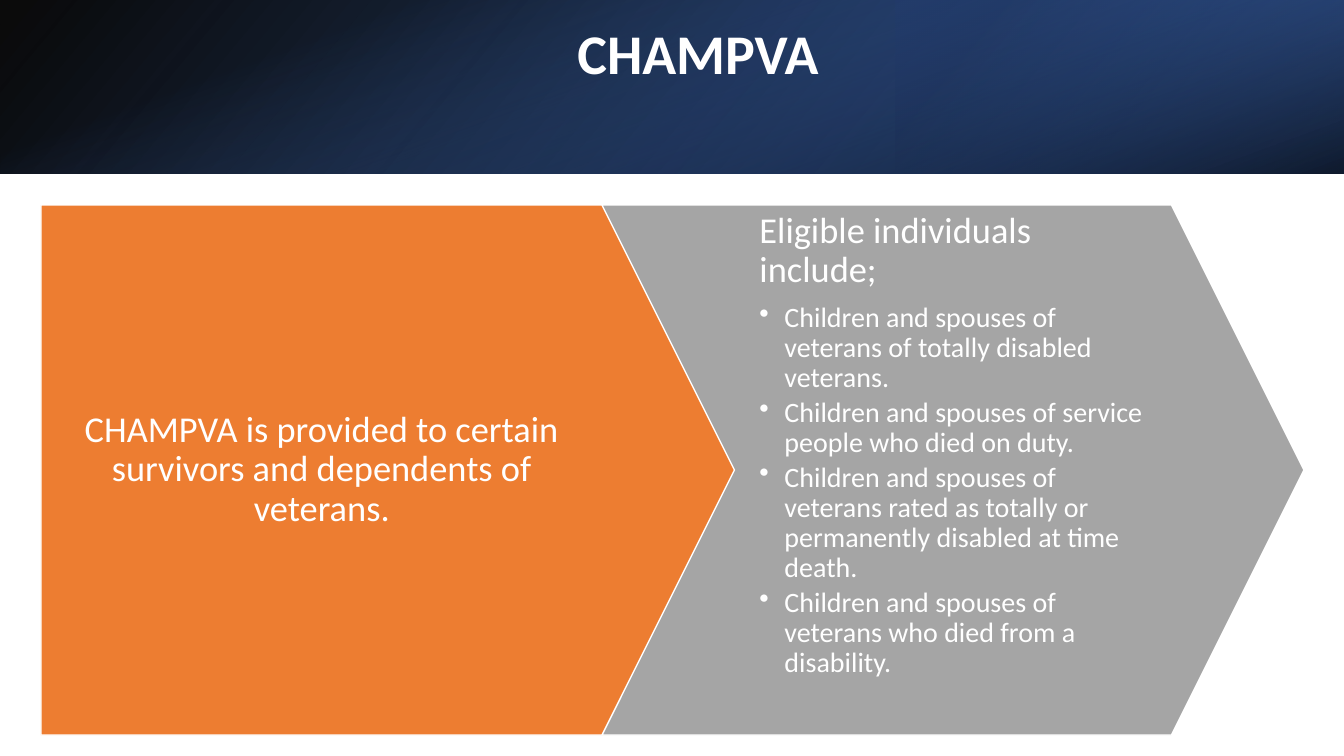
from lxml import etree
from pptx import Presentation
from pptx.dml.color import RGBColor
from pptx.enum.shapes import MSO_SHAPE
from pptx.enum.text import MSO_ANCHOR, PP_ALIGN
from pptx.oxml import parse_xml
from pptx.util import Pt

RECT, PENTAGON, CHEVRON = MSO_SHAPE.RECTANGLE, MSO_SHAPE.PENTAGON, MSO_SHAPE.CHEVRON
TOP, MIDDLE = MSO_ANCHOR.TOP, MSO_ANCHOR.MIDDLE
LEFT, CENTER = PP_ALIGN.LEFT, PP_ALIGN.CENTER
NS = "http://schemas.openxmlformats.org/drawingml/2006/main"

# Content
TITLE = "CHAMPVA"
SUMMARY = "CHAMPVA is provided to certain survivors and dependents of veterans."
ELIGIBLE_HEADING = "Eligible individuals include;"
ELIGIBLE = [
    "Children and spouses of veterans of totally disabled veterans.",
    "Children and spouses of service people who died on duty.",
    "Children and spouses of veterans rated as totally or permanently disabled at time death.",
    "Children and spouses of veterans who died from a disability.",
]

# Layout in px
SLIDE_W, SLIDE_H = 1344, 756
BANNER_H = 174
ARROW_LEFT, ARROW_TOP, ARROW_W, ARROW_H = 41, 205, 702, 530
ARROW_STEP = 561
BULLET_INDENT = 25

# Banner layers: box, rotation, flipped, gradient angle, stops (position, colour, opacity)
BANNER_LAYERS = [
    ((0, 0, SLIDE_W, BANNER_H), 0, True, 140,
     [(0, "000000", 96), (100, "2F5597", 100)]),
    ((SLIDE_W * 2 // 3, 0, SLIDE_W // 3, BANNER_H), 180, True, 320,
     [(19, "203864", 68), (100, "4472C4", 79)]),
    (((SLIDE_W - BANNER_H) // 2, (BANNER_H - SLIDE_W) // 2, BANNER_H, SLIDE_W), 90, False, 340,
     [(23, "4472C4", 0), (99, "000000", 74)]),
]


def px(length):
    return round(length * 914400 / 100.8)


def color(value):
    return RGBColor.from_string(value)


def add_shape(kind, box):
    shape = slide.shapes.add_shape(kind, *map(px, box))
    shape.shadow.inherit = False
    return shape


def fill_gradient(shape, angle, stops):
    stop_xml = "".join(
        f'<a:gs pos="{position * 1000}"><a:srgbClr val="{value}">'
        f'<a:alpha val="{opacity * 1000}"/></a:srgbClr></a:gs>'
        for position, value, opacity in stops)
    gradient = parse_xml(
        f'<a:gradFill xmlns:a="{NS}" rotWithShape="1"><a:gsLst>{stop_xml}</a:gsLst>'
        f'<a:lin ang="{angle * 60000}" scaled="0"/></a:gradFill>')
    shape.fill.background()
    no_fill = shape._element.spPr.find(f"{{{NS}}}noFill")
    no_fill.getparent().replace(no_fill, gradient)


def set_frame(shape, anchor, left, top, right, bottom):
    frame = shape.text_frame
    frame.word_wrap = True
    frame.vertical_anchor = anchor
    frame.margin_left, frame.margin_top = px(left), px(top)
    frame.margin_right, frame.margin_bottom = px(right), px(bottom)
    return frame


def write(paragraph, text, size, align, space_after=0, bold=False):
    paragraph.text = text
    paragraph.alignment = align
    paragraph.line_spacing = 0.9
    paragraph.space_after = Pt(space_after)
    font = paragraph.runs[0].font
    font.name, font.size, font.bold = "Calibri", Pt(size), bold
    font.color.rgb = color("FFFFFF")


def add_bullet(paragraph):
    properties = paragraph._p.get_or_add_pPr()
    properties.set("marL", str(px(BULLET_INDENT)))
    properties.set("indent", str(-px(BULLET_INDENT)))
    etree.SubElement(properties, f"{{{NS}}}buChar", char="•")


def add_arrow(kind, index, fill):
    arrow = add_shape(kind, (ARROW_LEFT + index * ARROW_STEP, ARROW_TOP, ARROW_W, ARROW_H))
    arrow.adjustments[0] = 0.25
    arrow.fill.solid()
    arrow.fill.fore_color.rgb = color(fill)
    arrow.line.color.rgb = color("FFFFFF")
    arrow.line.width = Pt(1)
    return arrow


presentation = Presentation()
presentation.slide_width, presentation.slide_height = px(SLIDE_W), px(SLIDE_H)
slide = presentation.slides.add_slide(presentation.slide_layouts[6])

# Banner
for box, rotation, flipped, angle, stops in BANNER_LAYERS:
    layer = add_shape(RECT, box)
    layer.rotation = rotation
    layer.line.fill.background()
    if flipped:
        layer._element.spPr.xfrm.set("flipH", "1")
    fill_gradient(layer, angle, stops)

# Title
title = slide.shapes.add_textbox(px(145), px(26), px(1106), px(60))
title_frame = set_frame(title, MIDDLE, 10, 0, 10, 0)
write(title_frame.paragraphs[0], TITLE, 40, CENTER, bold=True)

# Summary arrow
summary_arrow = add_arrow(PENTAGON, 0, "ED7D31")
summary_frame = set_frame(summary_arrow, MIDDLE, 25, 7, 99, 7)
write(summary_frame.paragraphs[0], SUMMARY, 26, CENTER)

# Eligibility arrow
eligible_arrow = add_arrow(CHEVRON, 1, "A5A5A5")
eligible_frame = set_frame(eligible_arrow, TOP, 25, 7, 25, 7)
write(eligible_frame.paragraphs[0], ELIGIBLE_HEADING, 26, LEFT, space_after=9)
for group in ELIGIBLE:
    item = eligible_frame.add_paragraph()
    write(item, group, 20, LEFT, space_after=3)
    item.level = 1
    add_bullet(item)

presentation.save("out.pptx")
